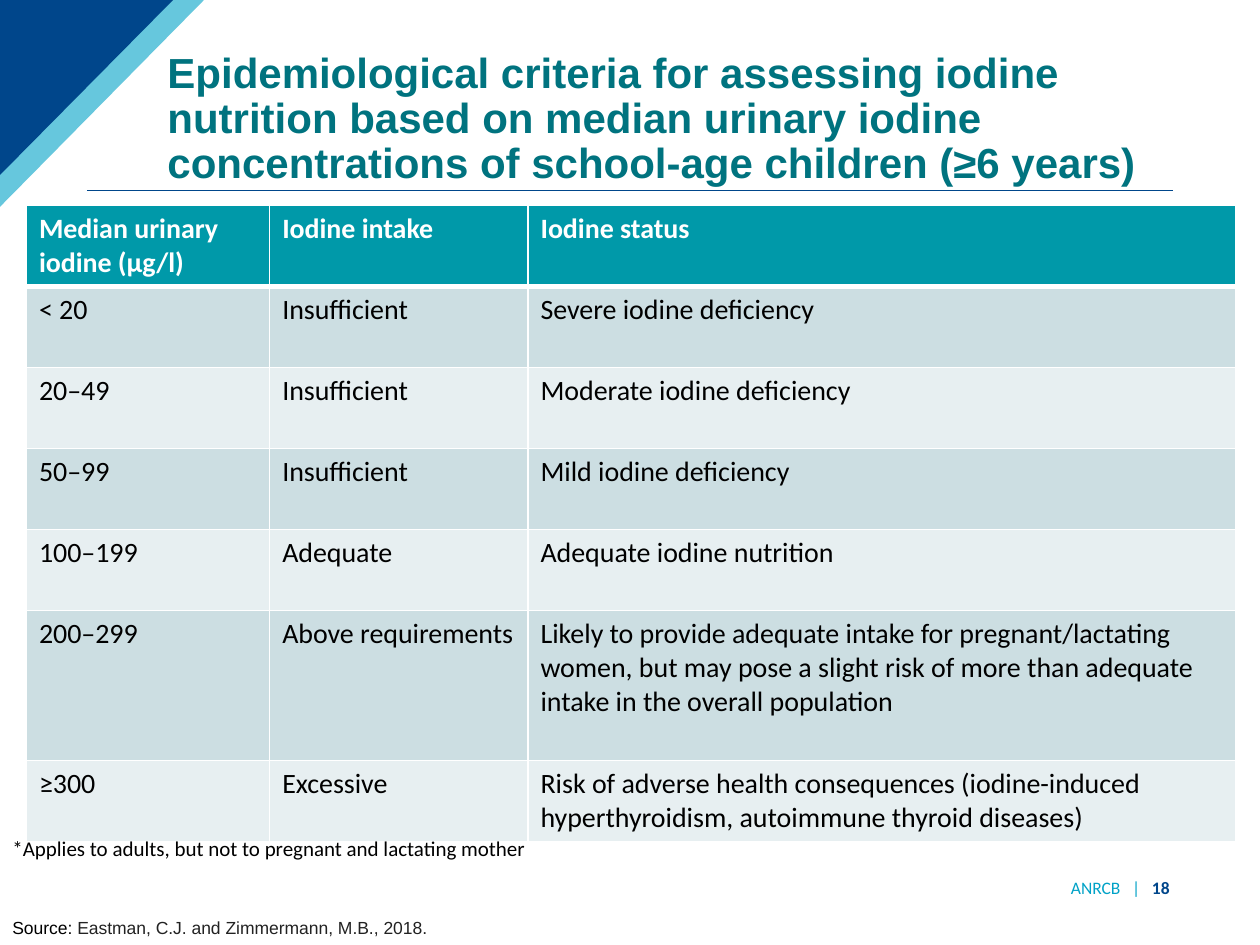
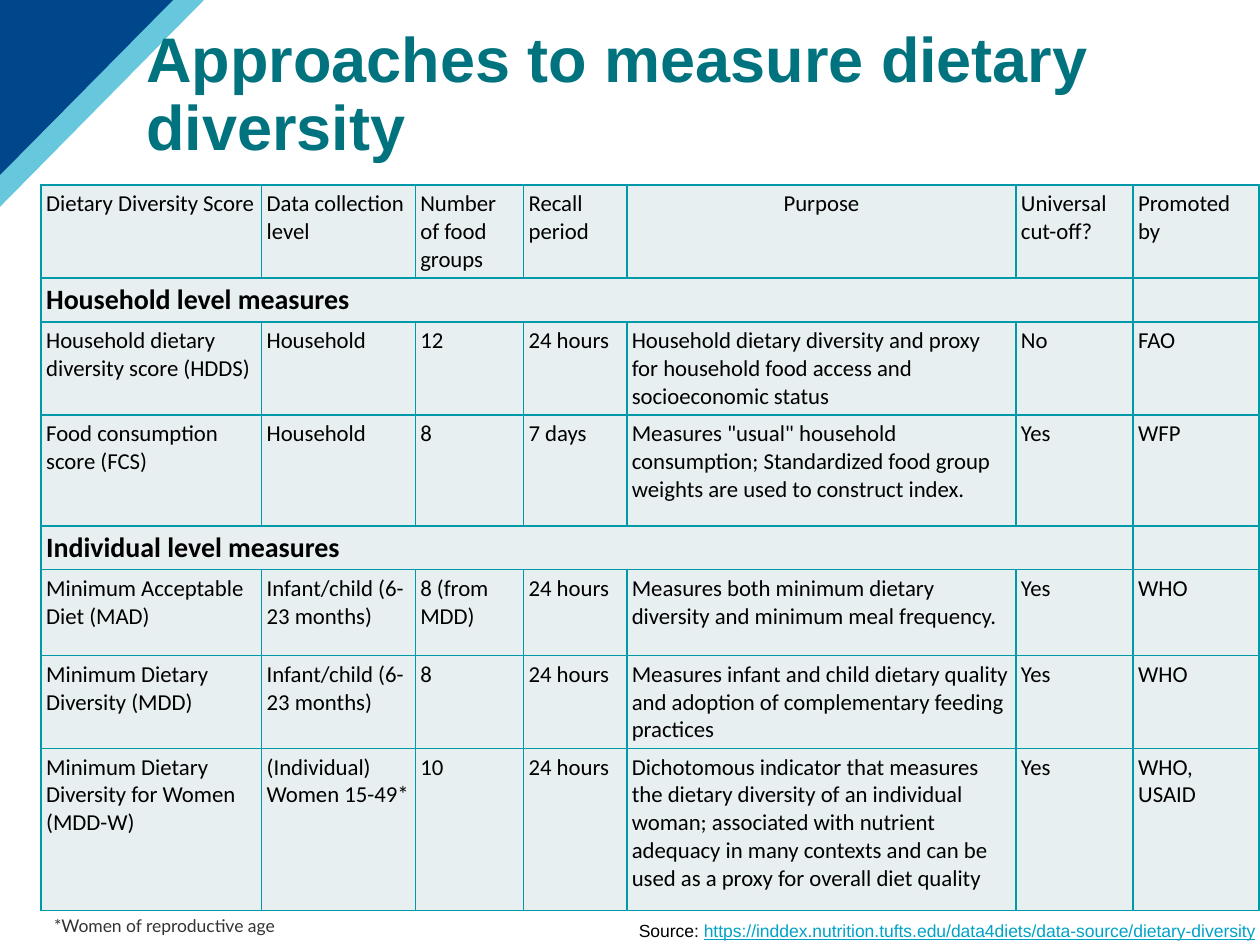
from dataclasses import dataclass

from lxml.etree import SubElement
from pptx import Presentation
from pptx.dml.color import RGBColor
from pptx.enum.shapes import MSO_CONNECTOR
from pptx.enum.text import MSO_ANCHOR as Anchor, PP_ALIGN as Align
from pptx.oxml.ns import qn
from pptx.util import Pt

COLORS = {
    "white": "FFFFFF", "black": "000000", "navy": "00468B", "sky": "00A2C7",
    "title": "00737F", "teal": "0099A9", "band": "CCDEE2", "pale": "E7EFF1",
    "charcoal": "222222", "gray": "333333",
}


@dataclass(frozen=True)
class Span:
    text: str
    color: str = "black"
    bold: bool = False
    underline: bool = False
    spacing: float = 0


@dataclass(frozen=True)
class Label:
    left: float
    top: float
    width: float
    height: float
    spans: tuple[Span, ...]
    size: float
    font: str
    align: Align = Align.LEFT
    anchor: Anchor = Anchor.TOP
    line_spacing: float = 1
    right_inset: float = 7.2


@dataclass(frozen=True)
class Corner:
    width: float
    height: float
    color: str
    alpha: int = 100


@dataclass(frozen=True)
class CellStyle:
    fill: str
    size: float
    color: str = "black"
    bold: bool = False
    bottom: float = 1
    align: Align = Align.LEFT


@dataclass(frozen=True)
class Grid:
    left: float
    top: float
    columns: tuple[float, ...]
    heights: tuple[float, ...]
    border: str
    margins: tuple[float, float]  # horizontal, vertical


CORNERS = (Corner(116.6, 118.2, "sky", 60), Corner(98.9, 100, "navy"))


def rgb(name: str) -> RGBColor:
    return RGBColor.from_string(COLORS[name])


def add_corners(page) -> None:
    for corner in CORNERS:
        builder = page.shapes.build_freeform(0, 0)
        builder.add_line_segments([(Pt(corner.width), 0), (0, Pt(corner.height))])
        shape = builder.convert_to_shape()
        shape.shadow.inherit = False
        shape.line.fill.background()
        shape.fill.solid()
        shape.fill.fore_color.rgb = rgb(corner.color)
        if corner.alpha < 100:
            color = shape.fill._xPr.find(f".//{qn('a:srgbClr')}")
            SubElement(color, qn("a:alpha"), val=str(corner.alpha * 1000))


def add_rule(page, left: float, right: float, top: float) -> None:
    rule = page.shapes.add_connector(
        MSO_CONNECTOR.STRAIGHT, Pt(left), Pt(top), Pt(right), Pt(top))
    rule.line.color.rgb = rgb("navy")
    rule.line.width = Pt(0.75)
    SubElement(rule._element.spPr, qn("a:effectLst"))


def add_label(page, label: Label) -> None:
    box = page.shapes.add_textbox(
        Pt(label.left), Pt(label.top), Pt(label.width), Pt(label.height))
    frame = box.text_frame
    frame.word_wrap = True
    frame.margin_right = Pt(label.right_inset)
    frame.vertical_anchor = label.anchor
    para = frame.paragraphs[0]
    para.alignment = label.align
    para.line_spacing = label.line_spacing
    para.font.size = Pt(label.size)
    para.font.name = label.font
    for span in label.spans:
        run = para.add_run()
        run.text = span.text
        run.font.color.rgb = rgb(span.color)
        run.font.bold = span.bold
        run.font.underline = span.underline
        if span.spacing:
            run.font._element.set("spc", str(int(span.spacing * 100)))


def add_title(page, text: str, left: float, top: float, width: float, size: float) -> None:
    add_label(page, Label(left, top, width, 80, (Span(text, "title", True),), size,
                          "Arial", anchor=Anchor.BOTTOM, line_spacing=0.9))


def set_borders(cell, color: str, bottom: float) -> None:
    properties = cell._tc.get_or_add_tcPr()
    for side, width in (("lnL", 1), ("lnR", 1), ("lnT", 1), ("lnB", bottom)):
        line = SubElement(properties, qn(f"a:{side}"), w=str(Pt(width)))
        fill = SubElement(line, qn("a:solidFill"))
        SubElement(fill, qn("a:srgbClr"), val=COLORS[color])


def fill_cell(cell, text: str, style: CellStyle, grid: Grid) -> None:
    set_borders(cell, grid.border, style.bottom)
    cell.fill.solid()
    cell.fill.fore_color.rgb = rgb(style.fill)
    cell.margin_left = cell.margin_right = Pt(grid.margins[0])
    cell.margin_top = cell.margin_bottom = Pt(grid.margins[1])
    cell.text = text
    para = cell.text_frame.paragraphs[0]
    para.alignment = style.align
    para.font.size = Pt(style.size)
    para.font.name = "Calibri"
    para.font.bold = style.bold
    para.font.color.rgb = rgb(style.color)


def add_grid(page, grid: Grid):
    """Add an unstyled table with the grid's column widths and row heights."""
    table = page.shapes.add_table(
        len(grid.heights), len(grid.columns), Pt(grid.left), Pt(grid.top),
        Pt(sum(grid.columns)), Pt(sum(grid.heights))).table
    table.first_row = table.horz_banding = False
    for column, width in zip(table.columns, grid.columns):
        column.width = Pt(width)
    for row, height in zip(table.rows, grid.heights):
        row.height = Pt(height)
    return table


# Iodine criteria
IODINE_GRID = Grid(15.1, 117.4, (139, 147.6, 404.6),
                   (46.3,) * 5 + (85.7, 46.3), "white", (7.2, 3.6))
IODINE_ROWS = (
    ("Median urinary iodine (µg/l)", "Iodine intake", "Iodine status"),
    ("< 20", "Insufficient", "Severe iodine deficiency"),
    ("20–49", "Insufficient", "Moderate iodine deficiency"),
    ("50–99", "Insufficient", "Mild iodine deficiency"),
    ("100–199", "Adequate", "Adequate iodine nutrition"),
    ("200–299", "Above requirements",
     "Likely to provide adequate intake for pregnant/lactating women, but may pose "
     "a slight risk of more than adequate intake in the overall population"),
    ("≥300", "Excessive",
     "Risk of adverse health consequences (iodine-induced hyperthyroidism, "
     "autoimmune thyroid diseases)"),
)
IODINE_LABELS = (
    Label(556.6, 499.7, 118.8, 15.1,
          (Span("ANRCB", "sky"), Span(" ", "sky", spacing=4.5),
           Span("| ", "sky", spacing=2.25), Span("18", "navy", True)),
          10, "Calibri", Align.RIGHT, Anchor.MIDDLE),
    Label(0, 473.8, 345.6, 21.6,
          (Span("*Applies to adults, but not to pregnant and lactating mother"),),
          12, "Calibri"),
    Label(0, 520.6, 393.8, 19.4,
          (Span("Source: "), Span("Eastman, C.J. and Zimmermann, M.B., 2018.", "charcoal")),
          10, "Arial"),
)

# Dietary diversity; a row with a single entry is a section heading
DIVERSITY_GRID = Grid(23.5, 105.8, (126, 87.8, 61.9, 59, 222.4, 67, 72),
                      (53.1, 25.1, 53.1, 63.4, 25.1, 49.1, 53.1, 92.6), "teal", (2.9, 2.9))
DIVERSITY_ROWS = (
    ("Dietary Diversity Score", "Data collection level", "Number of food groups",
     "Recall period", "Purpose", "Universal cut-off?", "Promoted by"),
    ("Household level measures",),
    ("Household dietary diversity score (HDDS)", "Household", "12", "24 hours",
     "Household dietary diversity and proxy for household food access and "
     "socioeconomic status", "No", "FAO"),
    ("Food consumption score (FCS)", "Household", "8", "7 days",
     'Measures "usual" household consumption; Standardized food group weights are '
     "used to construct index.", "Yes", "WFP"),
    ("Individual level measures",),
    ("Minimum Acceptable Diet (MAD)", "Infant/child (6-23 months)", "8 (from MDD)",
     "24 hours", "Measures both minimum dietary diversity and minimum meal frequency.",
     "Yes", "WHO"),
    ("Minimum Dietary Diversity (MDD)", "Infant/child (6-23 months)", "8", "24 hours",
     "Measures infant and child dietary quality and adoption of complementary feeding "
     "practices", "Yes", "WHO"),
    ("Minimum Dietary Diversity for Women (MDD-W)", "(Individual) Women 15-49*", "10",
     "24 hours",
     "Dichotomous indicator that measures the dietary diversity of an individual woman; "
     "associated with nutrient adequacy in many contexts and can be used as a proxy for "
     "overall diet quality", "Yes", "WHO, USAID"),
)
DIVERSITY_LABELS = (
    Label(358, 522.3, 362, 17.7,
          (Span("Source: "),
           Span("https://inddex.nutrition.tufts.edu/data4diets/data-source/dietary-diversity",
                "sky", underline=True)),
          10, "Arial", right_inset=0),
    Label(23.8, 519.1, 282.2, 20.9, (Span("*Women of reproductive age", "gray"),), 10, "Lato"),
)


def build_iodine_page(page) -> None:
    add_rule(page, 49.7, 670.3, 108.7)
    add_corners(page)
    add_title(page, "Epidemiological criteria for assessing iodine nutrition based on median "
              "urinary iodine concentrations of school-age children (≥6 years)",
              88.6, 31, 603.4, 24)
    table = add_grid(page, IODINE_GRID)
    header = CellStyle("teal", 16, "white", True, bottom=3)
    bands = (CellStyle("pale", 16), CellStyle("band", 16))
    for r, texts in enumerate(IODINE_ROWS):
        for c, text in enumerate(texts):
            fill_cell(table.cell(r, c), text, bands[r % 2] if r else header, IODINE_GRID)
    for label in IODINE_LABELS:
        add_label(page, label)


def build_diversity_page(page) -> None:
    add_corners(page)
    add_title(page, "Approaches to measure dietary diversity", 76.6, 17.3, 620, 36)
    table = add_grid(page, DIVERSITY_GRID)
    body = CellStyle("pale", 13)
    centered = CellStyle("pale", 13, align=Align.CENTER)
    section = CellStyle("pale", 16, bold=True)
    last = len(DIVERSITY_GRID.columns) - 1
    for r, texts in enumerate(DIVERSITY_ROWS):
        is_section = len(texts) == 1
        for c in range(last + 1):
            style = section if is_section else centered if texts[c] == "Purpose" else body
            fill_cell(table.cell(r, c), texts[c] if c < len(texts) else "",
                      style, DIVERSITY_GRID)
        if is_section:
            table.cell(r, 0).merge(table.cell(r, last - 1))
    for label in DIVERSITY_LABELS:
        add_label(page, label)


def main() -> None:
    deck = Presentation()
    deck.slide_width, deck.slide_height = Pt(720), Pt(540)
    blank = deck.slide_layouts[6]
    for build in (build_iodine_page, build_diversity_page):
        build(deck.slides.add_slide(blank))
    deck.save("out.pptx")


if __name__ == "__main__":
    main()
